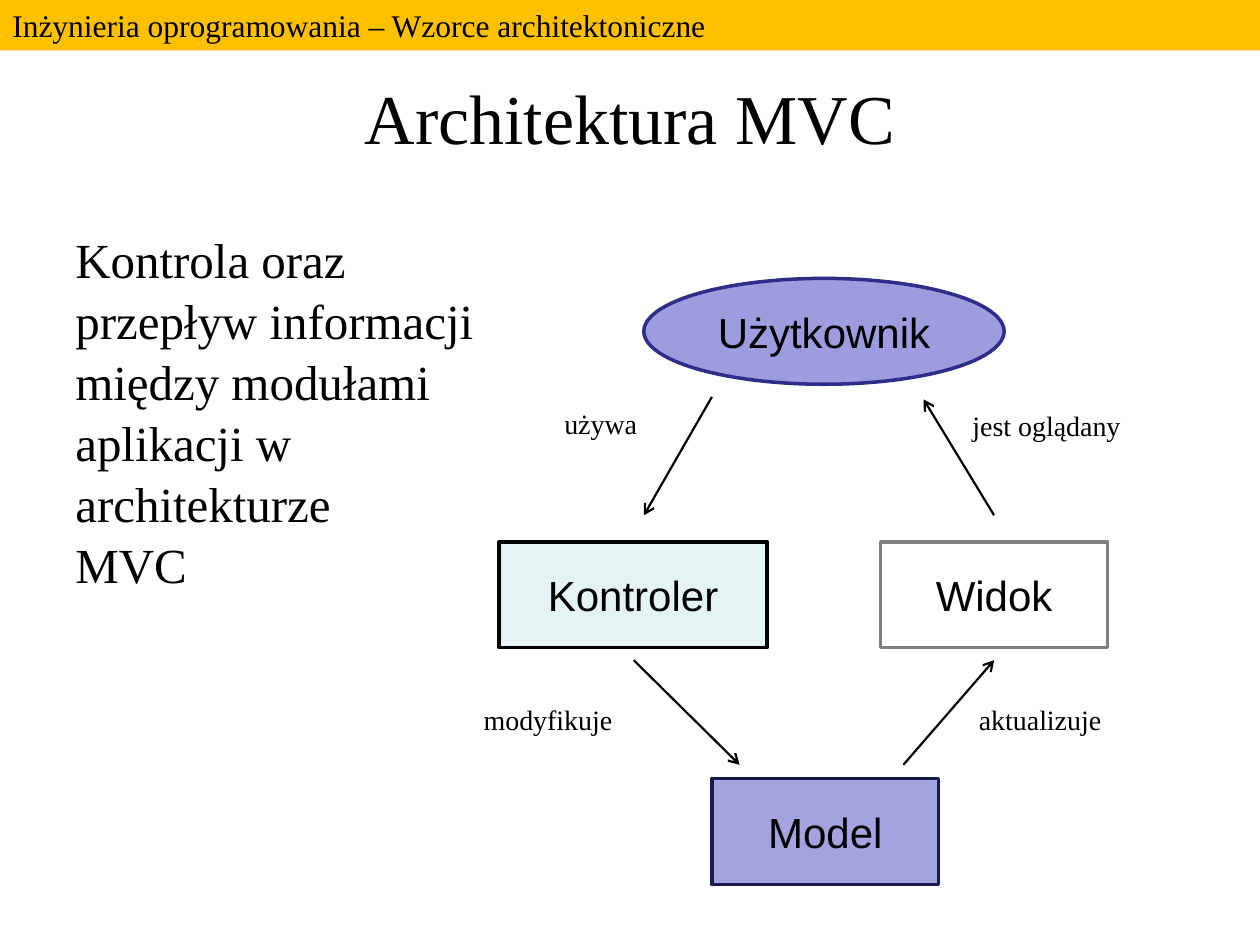
from lxml.etree import SubElement
from pptx import Presentation
from pptx.dml.color import RGBColor
from pptx.enum.shapes import MSO_CONNECTOR, MSO_SHAPE
from pptx.enum.text import MSO_ANCHOR, MSO_AUTO_SIZE, PP_ALIGN
from pptx.oxml.ns import qn
from pptx.util import Inches, Pt

COLUMNS, ROWS = 100, 75
SLIDE_WIDTH, SLIDE_HEIGHT = Inches(10), Inches(7.5)
BLACK = "000000"
SERIF, SANS = "Times New Roman", "Arial"
NODE_HEIGHT = 8.4
LABEL_HEIGHT = 3.7

NODES = [
    (MSO_SHAPE.RECTANGLE, "Model", 56.5, 61.8, 18, "A3A3E0", "19194D"),
    (MSO_SHAPE.RECTANGLE, "Widok", 69.9, 43, 18, "FFFFFF", "808080"),
    (MSO_SHAPE.RECTANGLE, "Kontroler", 39.6, 43, 21.3, "E4F3F4", BLACK),
    (MSO_SHAPE.OVAL, "Użytkownik", 51.1, 22.1, 28.6, "9C9CDF", "2D2D8A"),
]
FLOWS = [
    ((71.7, 60.7), (78.9, 52.4)),
    ((50.3, 52.4), (58.7, 60.7)),
    ((56.5, 31.5), (51.1, 40.9)),
    ((78.9, 40.9), (73.3, 31.7)),
]
FLOW_LABELS = [
    ("aktualizuje", 76.7, 55.3, 11.8),
    ("modyfikuje", 37.4, 55.3, 12.2),
    ("używa", 43.8, 31.8, 7.8),
    ("jest oglądany", 76.2, 31.9, 14),
]


def color(hex_code):
    """Turn a hex string into a colour."""
    return RGBColor.from_string(hex_code)


def place(column, row):
    """Convert a grid position or extent to slide lengths."""
    return int(SLIDE_WIDTH * column / COLUMNS), int(SLIDE_HEIGHT * row / ROWS)


def write(frame, text, size, font=SERIF, align=PP_ALIGN.LEFT, anchor=MSO_ANCHOR.TOP):
    """Write one formatted paragraph and return it."""
    paragraph = frame.paragraphs[0]
    paragraph.text = text
    paragraph.alignment = align
    frame.vertical_anchor = anchor
    for run in paragraph.runs:
        run.font.size = Pt(size)
        run.font.name = font
        run.font.color.rgb = color(BLACK)
    return paragraph


def add_text(slide, text, column, row, width, height, size, wrap=True, **style):
    """Add a text box and return its paragraph."""
    box = slide.shapes.add_textbox(*place(column, row), *place(width, height))
    box.text_frame.word_wrap = wrap
    if not wrap:
        box.text_frame.auto_size = MSO_AUTO_SIZE.SHAPE_TO_FIT_TEXT
    return write(box.text_frame, text, size, **style)


def add_block(slide, outline, column, row, width, height, fill, border=None):
    """Add a flat filled shape and return its text frame."""
    block = slide.shapes.add_shape(outline, *place(column, row), *place(width, height))
    block.shadow.inherit = False
    block.fill.solid()
    block.fill.fore_color.rgb = color(fill)
    if border:
        block.line.color.rgb = color(border)
        block.line.width = Pt(2)
    else:
        block.line.fill.background()
    return block.text_frame


def add_node(slide, outline, name, column, row, width, fill, border):
    """Add one module of the architecture."""
    frame = add_block(slide, outline, column, row, width, NODE_HEIGHT, fill, border)
    write(frame, name, 24, SANS, PP_ALIGN.CENTER, MSO_ANCHOR.MIDDLE)


def add_flow(slide, start, end):
    """Add an arrow from start to end."""
    flow = slide.shapes.add_connector(MSO_CONNECTOR.STRAIGHT, *place(*start), *place(*end))
    flow.line.color.rgb = color(BLACK)
    flow.line.width = Pt(1.25)
    SubElement(flow.line._get_or_add_ln(), qn("a:tailEnd"), type="arrow")
    SubElement(flow._element.spPr, qn("a:effectLst"))


def main():
    """Build the MVC slide and save it."""
    deck = Presentation()
    deck.slide_width, deck.slide_height = SLIDE_WIDTH, SLIDE_HEIGHT
    slide = deck.slides.add_slide(deck.slide_layouts[6])

    add_text(slide, "Architektura MVC", 5, 3, 90, 12.5, 40,
             align=PP_ALIGN.CENTER, anchor=MSO_ANCHOR.MIDDLE)
    summary = add_text(
        slide,
        "Kontrola oraz\nprzepływ informacji\nmiędzy modułami\n"
        "aplikacji w\narchitekturze\nMVC",
        5, 17.5, 90, 49.5, 28)
    summary.line_spacing = 1.04

    for node in NODES:
        add_node(slide, *node)
    for start, end in FLOWS:
        add_flow(slide, start, end)
    for text, column, row, width in FLOW_LABELS:
        add_text(slide, text, column, row, width, LABEL_HEIGHT, 16, wrap=False)

    header = add_block(slide, MSO_SHAPE.RECTANGLE, 0, 0, COLUMNS, 4, "FFC000")
    write(header, "Inżynieria oprogramowania – Wzorce architektoniczne", 18)

    deck.save("out.pptx")


if __name__ == "__main__":
    main()
